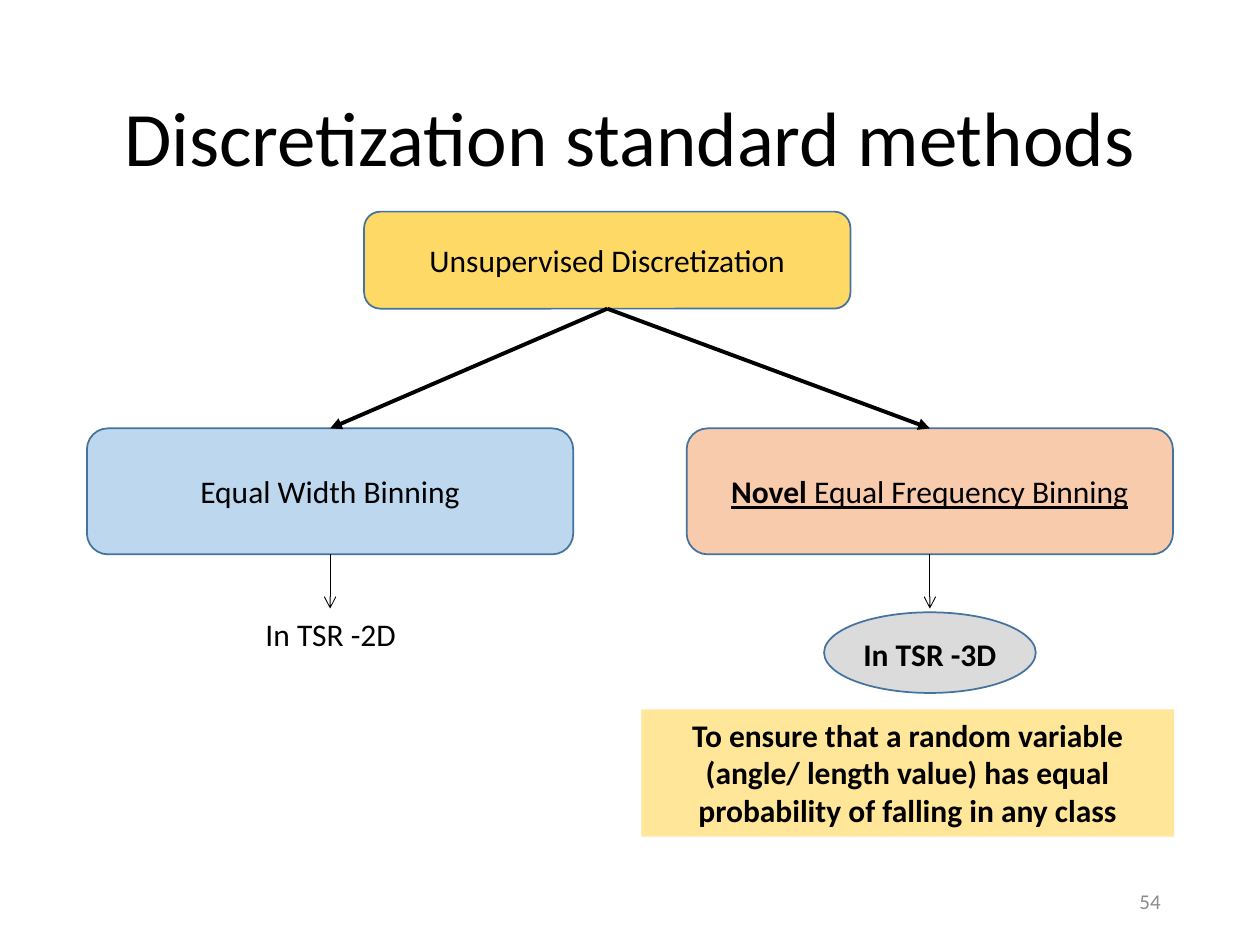
import pptx
import pptx.util
import pptx.dml.color
import pptx.enum.shapes
import pptx.enum.text
import pptx.oxml
import pptx.oxml.ns

Inches, Pt = pptx.util.Inches, pptx.util.Pt
KIND = pptx.enum.shapes.MSO_SHAPE
ALIGN = pptx.enum.text.PP_ALIGN
ANCHOR = pptx.enum.text.MSO_ANCHOR
BOLD = {"bold": True}

# Content: kind (None is a text box), place, fill, line, runs, text format
PARTS = {
    "ring": (KIND.OVAL, (6.54, 4.86, 1.68, 0.64), "DBDBDB", "43739E", [], {}),
    "title": (None, (0.69, 0.4, 8.62, 1.45), None, None,
              [("Discretization standard methods", {})],
              {"size": 44, "space": 0.9}),
    "page": (None, (7.06, 6.95, 2.25, 0.4), None, None, [("54", {})],
             {"size": 12, "color": "8C8C8C", "align": ALIGN.RIGHT}),
    "root": (KIND.ROUNDED_RECTANGLE, (2.89, 1.68, 3.86, 0.77), "FFD966", "43739E",
             [("Unsupervised Discretization", {})], {}),
    "novel": (KIND.ROUNDED_RECTANGLE, (5.45, 3.4, 3.86, 1), "F8CBAD", "43739E",
              [("Novel ", {"bold": True, "underline": True}),
               ("Equal Frequency Binning", {"underline": True})], {}),
    "width": (KIND.ROUNDED_RECTANGLE, (0.69, 3.4, 3.86, 1), "BDD7EE", "43739E",
              [("Equal Width Binning", {})], {}),
    "flat": (None, (1.67, 4.83, 1.91, 0.4), None, None,
             [("In TSR -2D", {})], {"anchor": ANCHOR.TOP}),
    "solid": (None, (6.52, 4.99, 1.72, 0.4), None, None,
              [("In TSR -3D", BOLD)], {"anchor": ANCHOR.TOP}),
    "aim": (KIND.RECTANGLE, (5.09, 5.63, 4.23, 1.01), "FFE699", None,
            [("To ensure that a random variable (angle/ length value) has equal "
              "probability of falling in any class", BOLD)], {"anchor": ANCHOR.TOP}),
}
BRANCHES = ["width", "novel"]
DROP = 0.43  # length of the thin arrows


def rgb(code):
    return pptx.dml.color.RGBColor.from_string(code)


def write(shape, runs, size=18, color="000000", align=ALIGN.CENTER,
          anchor=ANCHOR.MIDDLE, space=1.0):
    frame = shape.text_frame
    frame.word_wrap = True
    frame.vertical_anchor = anchor
    para = frame.paragraphs[0]
    para.alignment = align
    para.line_spacing = space
    for text, style in runs:
        run = para.add_run()
        run.text = text
        run.font.color.rgb = rgb(color)
        looks = {"name": "Calibri", "size": Pt(size), "bold": False, **style}
        for key, value in looks.items():
            setattr(run.font, key, value)


def draw(slide, kind, place, fill, line, runs, style):
    box = [Inches(n) for n in place]
    if kind is None:
        shape = slide.shapes.add_textbox(*box)
    else:
        shape = slide.shapes.add_shape(kind, *box)
        shape.shadow.inherit = False
        shape.fill.solid()
        shape.fill.fore_color.rgb = rgb(fill)
        if line:
            shape.line.color.rgb = rgb(line)
            shape.line.width = Pt(1)
        else:
            shape.line.fill.background()
    if runs:
        write(shape, runs, **style)
    return shape


def arrow(slide, start, end, width, head):
    """Draw an arrow from the bottom of start to the top of end, or straight down."""
    link = slide.shapes.add_connector(pptx.enum.shapes.MSO_CONNECTOR.STRAIGHT, 0, 0, 0, 0)
    link.begin_connect(start, 2)
    if end is None:
        link.end_x, link.end_y = link.begin_x, link.begin_y + Inches(DROP)
    else:
        link.end_connect(end, 0)
    link.line.color.rgb = rgb("000000")
    link.line.width = Pt(width)
    tip = pptx.oxml.parse_xml(
        f'<a:tailEnd {pptx.oxml.ns.nsdecls("a")} type="{head}"/>')
    link.line._get_or_add_ln().append(tip)
    link._element.spPr.append(
        pptx.oxml.parse_xml(f'<a:effectLst {pptx.oxml.ns.nsdecls("a")}/>'))


def main():
    deck = pptx.Presentation()
    deck.slide_width, deck.slide_height = Inches(10), Inches(7.5)
    slide = deck.slides.add_slide(deck.slide_layouts[6])

    # Boxes and text
    shapes = {name: draw(slide, *part) for name, part in PARTS.items()}

    # Arrows: root to each branch, then down to its use
    for name in BRANCHES:
        arrow(slide, shapes["root"], shapes[name], 2.25, "triangle")
        arrow(slide, shapes[name], None, 0.5, "arrow")

    deck.save("out.pptx")


if __name__ == "__main__":
    main()
